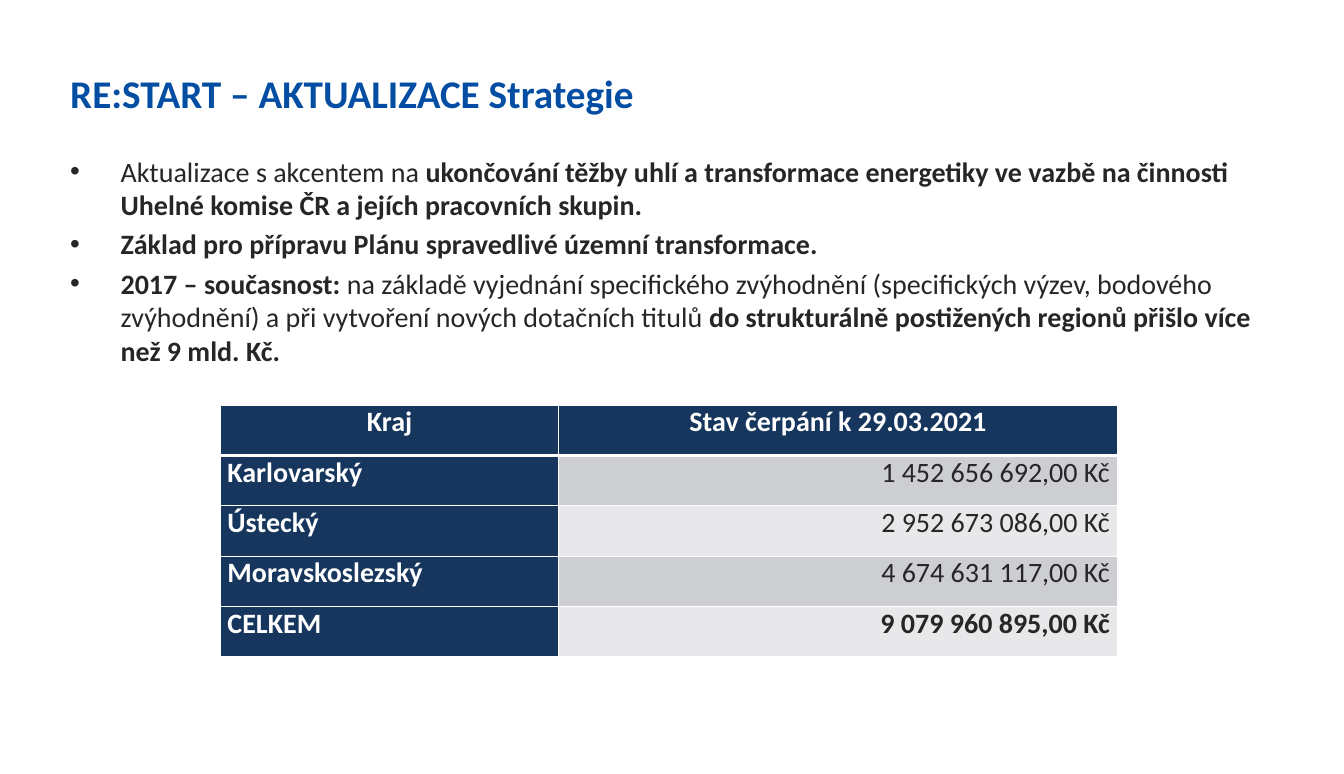
import pptx
import pptx.dml.color
import pptx.enum.text
import pptx.oxml
import pptx.oxml.ns
import pptx.util
from lxml import etree
from pptx.util import Cm, Pt

COLORS = {"title": "034EA2", "text": "262626", "white": "FFFFFF",
          "navy": "17365D", "band_dark": "CCCED2", "band_light": "E8E8EA"}
ALIGN = pptx.enum.text.PP_ALIGN
qn = pptx.oxml.ns.qn


def style(paragraph, size, color, bold=None):
    paragraph.font.name = "Calibri"
    paragraph.font.size = Pt(size)
    paragraph.font.bold = bold
    paragraph.font.color.rgb = pptx.dml.color.RGBColor.from_string(COLORS[color])


def add_border(cell, side, width):
    """Draw a white line on one side (L, R, T or B) of a table cell."""
    line = etree.SubElement(cell._tc.get_or_add_tcPr(), qn(f"a:ln{side}"), w=str(Pt(width)))
    fill = etree.SubElement(line, qn("a:solidFill"))
    etree.SubElement(fill, qn("a:srgbClr"), val=COLORS["white"])


presentation = pptx.Presentation()
presentation.slide_width = Cm(33.86)
presentation.slide_height = Cm(19.51)
slide = presentation.slides.add_slide(presentation.slide_layouts[6])

# Title
title = slide.shapes.add_textbox(Cm(1.52), Cm(1.6), Cm(30.48), Cm(1.5)).text_frame
title.word_wrap = True
title.vertical_anchor = pptx.enum.text.MSO_ANCHOR.MIDDLE
title.paragraphs[0].text = "RE:START – AKTUALIZACE Strategie"
style(title.paragraphs[0], 28, "title", True)

# Bullets: each is a list of (text, bold) pieces
bullets = [
    [("Aktualizace s akcentem na", False),
     (" ukončování těžby uhlí a transformace energetiky ve vazbě na činnosti "
      "Uhelné komise ČR a jejích pracovních skupin.", True)],
    [("Základ pro přípravu Plánu spravedlivé územní transformace.", True)],
    [("2017 – současnost: ", True),
     ("na základě vyjednání specifického zvýhodnění (specifických výzev, bodového "
      "zvýhodnění) a při vytvoření nových dotačních titulů ", False),
     ("do strukturálně postižených regionů přišlo více než 9 mld. Kč.", True)],
]
body = slide.shapes.add_textbox(Cm(1.52), Cm(3.76), Cm(30.48), Cm(6)).text_frame
body.word_wrap = True
for index, pieces in enumerate(bullets):
    paragraph = body.add_paragraph() if index else body.paragraphs[0]
    if index:
        paragraph.space_before = Pt(4)
    properties = paragraph._p.get_or_add_pPr()
    properties.set("marL", str(Cm(1.27)))
    properties.set("indent", str(-Cm(1.27)))
    etree.SubElement(properties, qn("a:buFont"), typeface="Arial")
    etree.SubElement(properties, qn("a:buChar"), char="•")
    style(paragraph, 20, "text")
    for text, bold in pieces:
        run = paragraph.add_run()
        run.text = text
        run.font.bold = bold

# Spending by region
regions = [
    ("Kraj", "Stav čerpání k 29.03.2021"),
    ("Karlovarský", "1 452 656 692,00 Kč"),
    ("Ústecký", "2 952 673 086,00 Kč"),
    ("Moravskoslezský", "4 674 631 117,00 Kč"),
    ("CELKEM", "9 079 960 895,00 Kč"),
]
spending = slide.shapes.add_table(len(regions), 2, Cm(5.55), Cm(10.21), Cm(22.6), Cm(6.35)).table
spending.columns[0].width = Cm(8.53)
spending.columns[1].width = Cm(14.07)
last = len(regions) - 1
for row, values in enumerate(regions):
    for column, value in enumerate(values):
        cell = spending.cell(row, column)
        cell.margin_left = cell.margin_right = Cm(0.18)
        cell.margin_top = cell.margin_bottom = 0
        for side in "LRTB":
            under_header = (row, side) in [(0, "B"), (1, "T")]
            add_border(cell, side, 3 if under_header else 1)

        is_label = row == 0 or column == 0
        band = "band_dark" if row % 2 else "band_light"
        cell.fill.solid()
        cell.fill.fore_color.rgb = pptx.dml.color.RGBColor.from_string(
            COLORS["navy" if is_label else band])

        paragraph = cell.text_frame.paragraphs[0]
        paragraph.text = value
        paragraph.alignment = ALIGN.CENTER if row == 0 else (ALIGN.LEFT, ALIGN.RIGHT)[column]
        style(paragraph, 20, "white" if is_label else "text", is_label or row == last)

presentation.save("out.pptx")
